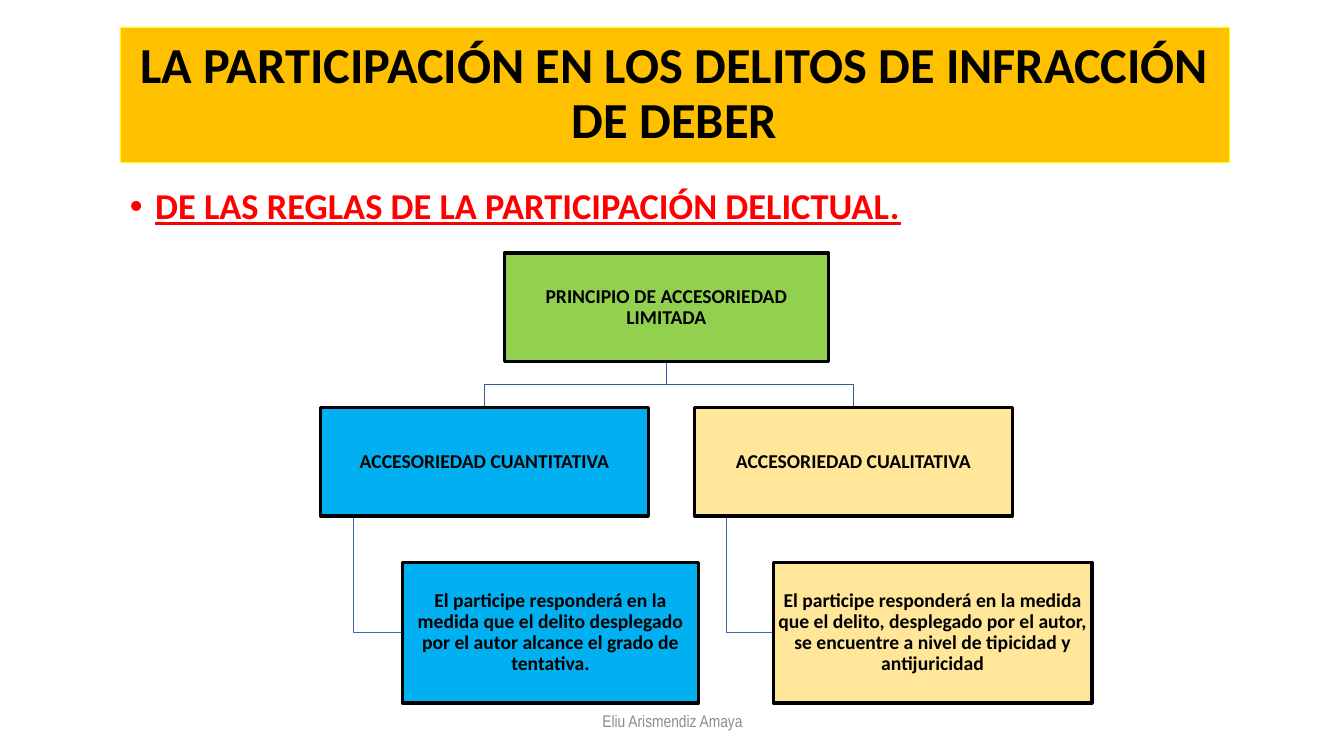
import dataclasses

import lxml.etree
import pptx
import pptx.dml.color
import pptx.enum.shapes
import pptx.enum.text
import pptx.oxml.ns
import pptx.util

ALIGN = pptx.enum.text.PP_ALIGN


@dataclasses.dataclass(frozen=True)
class Theme:
    font: str = "Calibri"
    footer_font: str = "Arial Narrow"
    ink: str = "000000"
    accent: str = "FF0000"
    muted: str = "8C8C8C"
    banner: str = "FFC000"
    banner_edge: str = "FFFF00"
    root: str = "92D050"
    quantity: str = "00B0F0"
    quality: str = "FFE699"
    trunk_line: str = "365B9D"
    leaf_line: str = "3E67B2"
    title_size: int = 36
    heading_size: int = 26
    node_size: int = 14
    footer_size: int = 12


THEME = Theme()
WIDTH, HEIGHT = pptx.util.Inches(13.33), pptx.util.Inches(7.5)

# Top and height of each level of the tree, in percent of the slide's height.
ROOT_ROW, BRANCH_ROW, LEAF_ROW = (33.47, 14.4), (53.87, 14.4), (74.4, 18.6)


def across(percent):
    return round(WIDTH * percent / 100)


def down(percent):
    return round(HEIGHT * percent / 100)


def area(columns, rows):
    """Turn (left, width) and (top, height) percentages into left, top, width, height."""
    return across(columns[0]), down(rows[0]), across(columns[1]), down(rows[1])


def color(code):
    return pptx.dml.color.RGBColor.from_string(code)


def apply_format(target, values):
    for name, value in values.items():
        setattr(target, name, value)


def set_line(shape, code, points):
    shape.line.color.rgb = color(code)
    shape.line.width = pptx.util.Pt(points)


def write(shape, text, size, code=THEME.ink, margin=None, frame=None, para=None, font=None):
    text_frame = shape.text_frame
    middle = pptx.enum.text.MSO_ANCHOR.MIDDLE
    apply_format(text_frame, {"word_wrap": True, "vertical_anchor": middle} | (frame or {}))
    if margin is not None:
        sides = ("left", "top", "right", "bottom")
        apply_format(text_frame, {f"margin_{side}": pptx.util.Inches(margin) for side in sides})
    paragraph = text_frame.paragraphs[0]
    apply_format(paragraph, {"alignment": ALIGN.CENTER, "line_spacing": 0.9} | (para or {}))
    span = paragraph.add_run()
    span.text = text
    look = {"name": THEME.font, "size": pptx.util.Pt(size), "bold": True}
    apply_format(span.font, look | (font or {}))
    span.font.color.rgb = color(code)
    return paragraph


def add_box(page, columns, rows, fill, edge, edge_width):
    rectangle = pptx.enum.shapes.MSO_SHAPE.RECTANGLE
    box = page.shapes.add_shape(rectangle, *area(columns, rows))
    box.shadow.inherit = False
    box.fill.solid()
    box.fill.fore_color.rgb = color(fill)
    set_line(box, edge, edge_width)
    return box


def add_node(page, columns, rows, fill, text):
    box = add_box(page, columns, rows, fill, THEME.ink, 2.25)
    write(box, text, THEME.node_size, margin=0.01)


def add_path(page, points, code):
    """Draw an open line through points given in percent of the slide."""
    start, *others = [(across(x), down(y)) for x, y in points]
    builder = page.shapes.build_freeform(*start)
    builder.add_line_segments(others, close=False)
    path_shape = builder.convert_to_shape()
    path_shape.shadow.inherit = False
    path_shape.fill.background()
    set_line(path_shape, code, 1)


def add_trunk(page, root, branch):
    """Link the bottom of the root to the top of a branch."""
    root_x, branch_x = (left + width / 2 for left, width in (root, branch))
    bottom, top = sum(ROOT_ROW), BRANCH_ROW[0]
    middle = (bottom + top) / 2
    points = [(root_x, bottom), (root_x, middle), (branch_x, middle), (branch_x, top)]
    add_path(page, points, THEME.trunk_line)


def add_twig(page, branch, leaf):
    """Link a branch, a tenth of its width in, to the left side of its leaf."""
    x = branch[0] + branch[1] / 10
    y = LEAF_ROW[0] + LEAF_ROW[1] / 2
    add_path(page, [(x, sum(BRANCH_ROW)), (x, y), (leaf[0], y)], THEME.leaf_line)


def add_bullet(paragraph, indent):
    properties = paragraph._p.get_or_add_pPr()
    properties.set("marL", str(indent))
    properties.set("indent", str(-indent))
    for tag, name, value in (("a:buFont", "typeface", "Arial"), ("a:buChar", "char", "•")):
        element = lxml.etree.SubElement(properties, pptx.oxml.ns.qn(tag))
        element.set(name, value)


def add_title(page, text):
    box = add_box(page, (8.93, 82.52), (3.6, 17.87), THEME.banner, THEME.banner_edge, 0.5)
    write(box, text, THEME.title_size)


def add_heading(page, text):
    box = page.shapes.add_textbox(*area((8.93, 82.52), (24.27, 7)))
    paragraph = write(
        box, text, THEME.heading_size, THEME.accent,
        frame={"vertical_anchor": pptx.enum.text.MSO_ANCHOR.TOP},
        para={"alignment": ALIGN.LEFT},
        font={"underline": True},
    )
    add_bullet(paragraph, pptx.util.Inches(0.25))


def add_footer(page, text):
    box = page.shapes.add_textbox(*area((33.16, 33.76), (92.67, 5.33)))
    write(
        box, text, THEME.footer_size, THEME.muted,
        para={"line_spacing": 1.0},
        font={"name": THEME.footer_font, "bold": False},
    )


def add_tree(page):
    root = (37.51, 24.16)
    branches = [
        ((23.86, 24.38), (29.93, 22.06), THEME.quantity, "ACCESORIEDAD CUANTITATIVA",
         "El participe responderá en la medida que el delito desplegado por el autor "
         "alcance el grado de tentativa."),
        ((51.69, 23.63), (57.54, 23.71), THEME.quality, "ACCESORIEDAD CUALITATIVA",
         "El participe responderá en la medida que el delito, desplegado por el autor, "
         "se encuentre a nivel de tipicidad y antijuricidad"),
    ]
    for branch, leaf, fill, name, rule in branches:
        add_trunk(page, root, branch)
        add_twig(page, branch, leaf)
        add_node(page, branch, BRANCH_ROW, fill, name)
        add_node(page, leaf, LEAF_ROW, fill, rule)
    add_node(page, root, ROOT_ROW, THEME.root, "PRINCIPIO DE ACCESORIEDAD LIMITADA")


def main():
    deck = pptx.Presentation()
    apply_format(deck, {"slide_width": WIDTH, "slide_height": HEIGHT})
    page = deck.slides.add_slide(deck.slide_layouts[6])
    add_title(page, "LA PARTICIPACIÓN EN LOS DELITOS DE INFRACCIÓN DE DEBER")
    add_heading(page, "DE LAS REGLAS DE LA PARTICIPACIÓN DELICTUAL.")
    add_tree(page)
    add_footer(page, "Eliu Arismendiz Amaya")
    deck.save("out.pptx")


if __name__ == "__main__":
    main()
